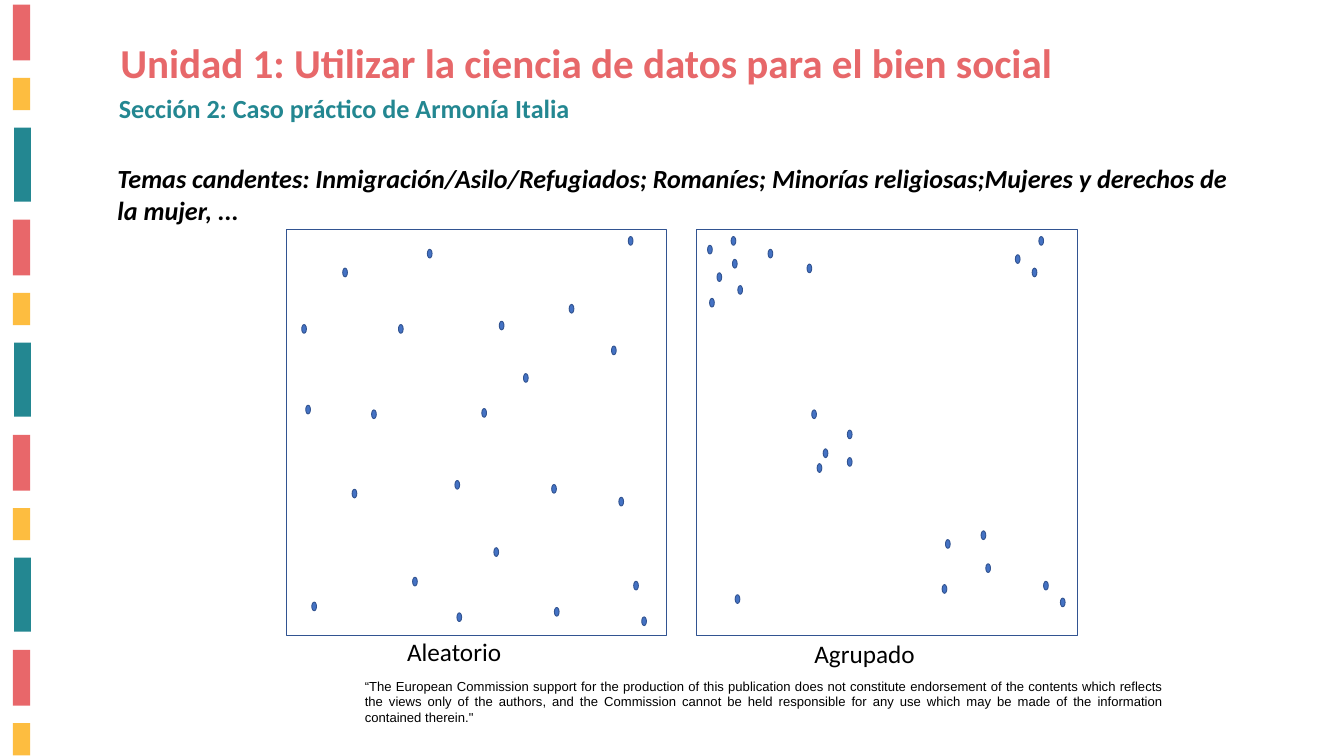
from pptx import Presentation
from pptx.dml.color import RGBColor
from pptx.enum.shapes import MSO_SHAPE
from pptx.enum.text import MSO_ANCHOR, MSO_AUTO_SIZE, PP_ALIGN
from pptx.util import Inches, Pt

W, H = 20, 11.25
COLORS = {
    "pink": "E8676A", "title": "E7686A", "yellow": "FDBD40", "teal": "238791",
    "dot": "4472C4", "outline": "325491", "black": "000000",
}

# Left border: colour, left, top, width, height; repeated down the slide
STRIPES = [
    ("pink", 0.19, 0.07, 0.26, 0.83),
    ("yellow", 0.19, 1.16, 0.26, 0.48),
    ("teal", 0.21, 1.9, 0.25, 1.1),
]
STRIPE_PERIOD = 3.2

TITLE = "Unidad 1: Utilizar la ciencia de datos para el bien social"
# Text, box, size, colour, style
TEXTS = [
    ("Sección 2: Caso práctico de Armonía Italia",
     (1.67, 1.33, 10.98, 0.57), 28, "teal", {"bold": True}),
    ("Temas candentes: Inmigración/Asilo/Refugiados; Romaníes; Minorías "
     "religiosas;Mujeres y derechos de la mujer, ...",
     (1.65, 2.37, 17.08, 1.04), 28, "black", {"bold": True, "italic": True}),
    ("Aleatorio", (5.96, 9.42, 3.17, 0.56), 27, "black", {}),
    ("Agrupado", (12.02, 9.45, 3.17, 0.56), 27, "black", {}),
    ("“The European Commission support for the production of this publication "
     "does not constitute endorsement of the contents which reflects the views "
     "only of the authors, and the Commission cannot be held responsible for any "
     "use which may be made of the information contained therein.\"",
     (5.33, 10.04, 12.08, 0.81), 14, "black",
     {"font": "Arial", "align": PP_ALIGN.JUSTIFY}),
]

# Scatter panels: dots are offsets from the panel's top left corner
PANEL_TOP, PANEL_W, PANEL_H = 3.42, 5.66, 6.03
DOT_W, DOT_H = 0.07, 0.13
RANDOM = [
    (0.23, 1.41), (2.1, 0.29), (0.84, 0.57), (0.98, 3.86), (1.27, 2.68),
    (4.21, 1.11), (1.67, 1.41), (1.88, 5.17), (0.29, 2.61), (3.99, 5.62),
    (2.91, 2.66), (3.53, 2.14), (2.51, 3.73), (3.17, 1.36), (2.54, 5.7),
    (3.95, 3.79), (4.84, 1.73), (3.09, 4.73), (5.09, 0.1), (0.38, 5.54),
    (5.17, 5.23), (5.29, 5.76), (4.95, 3.98),
]
CLUSTERED = [
    (0.16, 0.23), (0.51, 0.1), (0.3, 0.64), (0.53, 0.44), (1.06, 0.29),
    (0.61, 0.83), (1.64, 0.51), (0.19, 1.02), (1.79, 3.48), (1.88, 3.26),
    (2.24, 3.39), (2.24, 2.98), (1.71, 2.68), (4.74, 0.37), (4.99, 0.57),
    (3.65, 5.28), (3.7, 4.61), (4.3, 4.97), (5.09, 0.1), (4.23, 4.48),
    (5.16, 5.23), (5.41, 5.48), (0.57, 5.43),
]
PANELS = [(4.26, RANDOM), (10.37, CLUSTERED)]


def rgb(name):
    return RGBColor.from_string(COLORS[name])


def add_shape(kind, x, y, w, h, fill=None, line=None):
    sp = s.shapes.add_shape(kind, Inches(x), Inches(y), Inches(w), Inches(h))
    sp.shadow.inherit = False
    if fill:
        sp.fill.solid()
        sp.fill.fore_color.rgb = rgb(fill)
    else:
        sp.fill.background()
    if line:
        sp.line.color.rgb = rgb(line)
        sp.line.width = Pt(1)
    else:
        sp.line.fill.background()


def write(sp, text, size, color, bold=False, italic=False, font="Calibri",
          align=PP_ALIGN.LEFT):
    tf = sp.text_frame
    tf.word_wrap = True
    tf.auto_size = MSO_AUTO_SIZE.NONE
    tf.vertical_anchor = MSO_ANCHOR.TOP
    p = tf.paragraphs[0]
    p.text = text
    p.alignment = align
    p.font.name, p.font.size = font, Pt(size)
    p.font.bold, p.font.italic = bold, italic
    p.font.color.rgb = rgb(color)


prs = Presentation()
prs.slide_width, prs.slide_height = Inches(W), Inches(H)
s = prs.slides.add_slide(prs.slide_layouts[5])

# Title
title = s.shapes.title
title.left, title.top = Inches(1.69), Inches(0.5)
title.width, title.height = Inches(14.34), Inches(0.84)
write(title, TITLE, 44, "title", bold=True)

# Left border, down to the bottom edge
for i in range(4):
    for color, x, y, w, h in STRIPES:
        top = y + i * STRIPE_PERIOD
        if top < H:
            add_shape(MSO_SHAPE.RECTANGLE, x, top, w, min(h, H - top), fill=color)

# Panels with their dots
for left, dots in PANELS:
    add_shape(MSO_SHAPE.RECTANGLE, left, PANEL_TOP, PANEL_W, PANEL_H, line="outline")
    for dx, dy in dots:
        add_shape(MSO_SHAPE.OVAL, left + dx, PANEL_TOP + dy, DOT_W, DOT_H,
                  fill="dot", line="outline")

# Subtitle, topics, panel labels and disclaimer
for text, box, size, color, style in TEXTS:
    write(s.shapes.add_textbox(*map(Inches, box)), text, size, color, **style)

prs.save("out.pptx")
